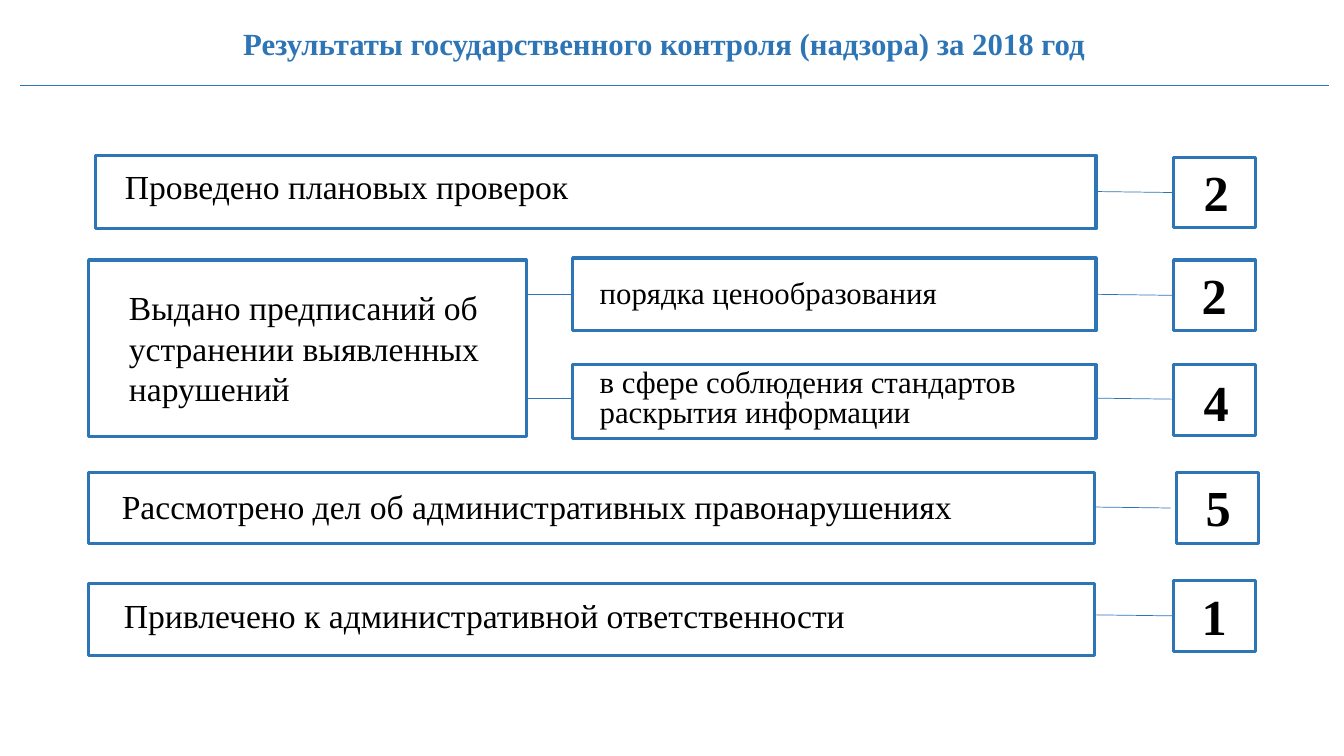
import pptx
import pptx.dml.color
import pptx.enum.shapes
import pptx.enum.text
import pptx.util
from lxml import etree
from pptx.util import Inches

DRAWING_NS = "http://schemas.openxmlformats.org/drawingml/2006/main"


def color(hex_code):
    return pptx.dml.color.RGBColor.from_string(hex_code)


class SlideBuilder:
    FONT = "Times New Roman"
    BLUE = "2E75B6"
    BLACK = "000000"
    WHITE = "FFFFFF"

    def __init__(self, slide):
        self.slide = slide

    def set_text(self, shape, text, size, hex_code=BLACK, bold=False, spacing=1.0,
                 align=pptx.enum.text.PP_ALIGN.LEFT):
        frame = shape.text_frame
        frame.text = text
        frame.word_wrap = True
        frame.auto_size = pptx.enum.text.MSO_AUTO_SIZE.NONE
        frame.vertical_anchor = pptx.enum.text.MSO_ANCHOR.TOP
        paragraph = frame.paragraphs[0]
        paragraph.alignment = align
        paragraph.line_spacing = spacing
        font = paragraph.runs[0].font
        font.name = self.FONT
        font.size = pptx.util.Pt(size)
        font.bold = bold
        font.color.rgb = color(hex_code)

    def title(self, text, left, top, width, height):
        shape = self.slide.shapes.title
        shape.left, shape.top = Inches(left), Inches(top)
        shape.width, shape.height = Inches(width), Inches(height)
        self.set_text(shape, text, 22, self.BLUE, bold=True,
                      align=pptx.enum.text.PP_ALIGN.CENTER)

    def box(self, left, top, width, height):
        shape = self.slide.shapes.add_shape(
            pptx.enum.shapes.MSO_SHAPE.RECTANGLE,
            Inches(left), Inches(top), Inches(width), Inches(height))
        shape.shadow.inherit = False
        shape.fill.solid()
        shape.fill.fore_color.rgb = color(self.WHITE)
        shape.line.color.rgb = color(self.BLUE)
        shape.line.width = pptx.util.Pt(2.25)

    def label(self, text, left, top, width, height, size=24, **style):
        shape = self.slide.shapes.add_textbox(
            Inches(left), Inches(top), Inches(width), Inches(height))
        self.set_text(shape, text, size, **style)

    def line(self, x1, y1, x2, y2, width=0.5):
        connector = self.slide.shapes.add_connector(
            pptx.enum.shapes.MSO_CONNECTOR.STRAIGHT,
            Inches(x1), Inches(y1), Inches(x2), Inches(y2))
        connector.line.color.rgb = color(self.BLUE)
        connector.line.width = pptx.util.Pt(width)
        etree.SubElement(connector._element.spPr, f"{{{DRAWING_NS}}}effectLst")


def main():
    presentation = pptx.Presentation()
    presentation.slide_width = Inches(13.33)
    presentation.slide_height = Inches(7.5)
    slide = presentation.slides.add_slide(presentation.slide_layouts[5])
    builder = SlideBuilder(slide)

    # Title and rule
    builder.title("Результаты государственного контроля (надзора) за 2018 год",
                  0.34, 0.2, 12.49, 0.47)
    builder.line(0.2, 0.85, 13.18, 0.85, width=1)

    # Result rows: box, text, text place, line spacing, text size
    rows = [
        ((0.95, 1.54, 9.92, 0.73), "Проведено плановых проверок",
         (1.14, 1.6, 7.45, 0.5), 1.0, 24),
        ((5.68, 2.56, 5.19, 0.72), "порядка ценообразования",
         (5.85, 2.74, 3.57, 0.4), 0.8, 22),
        ((5.68, 3.62, 5.19, 0.73),
         "в сфере соблюдения стандартов раскрытия информации",
         (5.85, 3.62, 4.57, 0.69), 0.8, 22),
        ((0.88, 4.69, 9.98, 0.7),
         "Рассмотрено дел об административных правонарушениях",
         (1.11, 4.85, 8.59, 0.42), 0.8, 24),
        ((0.88, 5.79, 9.98, 0.71),
         "Привлечено к административной ответственности",
         (1.13, 5.93, 8.59, 0.43), 0.8, 24),
    ]
    for box, text, place, spacing, size in rows:
        builder.box(*box)
        builder.label(text, *place, size=size, spacing=spacing)

    # Counts: number, box left and top, number left and top, link left and top
    counts = [
        ("2", 11.64, 1.56, 11.84, 1.55, 10.86, 1.9),
        ("2", 11.64, 2.58, 11.82, 2.57, 10.86, 2.92),
        ("4", 11.64, 3.62, 11.84, 3.63, 10.87, 3.95),
        ("5", 11.67, 4.69, 11.86, 4.67, 10.84, 5.03),
        ("1", 11.64, 5.76, 11.82, 5.76, 10.87, 6.1),
    ]
    for number, left, top, text_left, text_top, link_left, link_top in counts:
        builder.line(link_left, link_top, link_left + 0.77, link_top + 0.01)
        builder.box(left, top, 0.81, 0.7)
        builder.label(number, text_left, text_top, 0.42, 0.71, size=36, bold=True)

    # Orders group with its two branches
    builder.box(0.88, 2.58, 4.34, 1.75)
    builder.label("Выдано предписаний об устранении выявленных нарушений",
                  1.18, 2.8, 3.75, 1.31)
    for branch_top in (2.92, 3.95):
        builder.line(5.23, branch_top, 5.68, branch_top)

    presentation.save("out.pptx")


if __name__ == "__main__":
    main()
